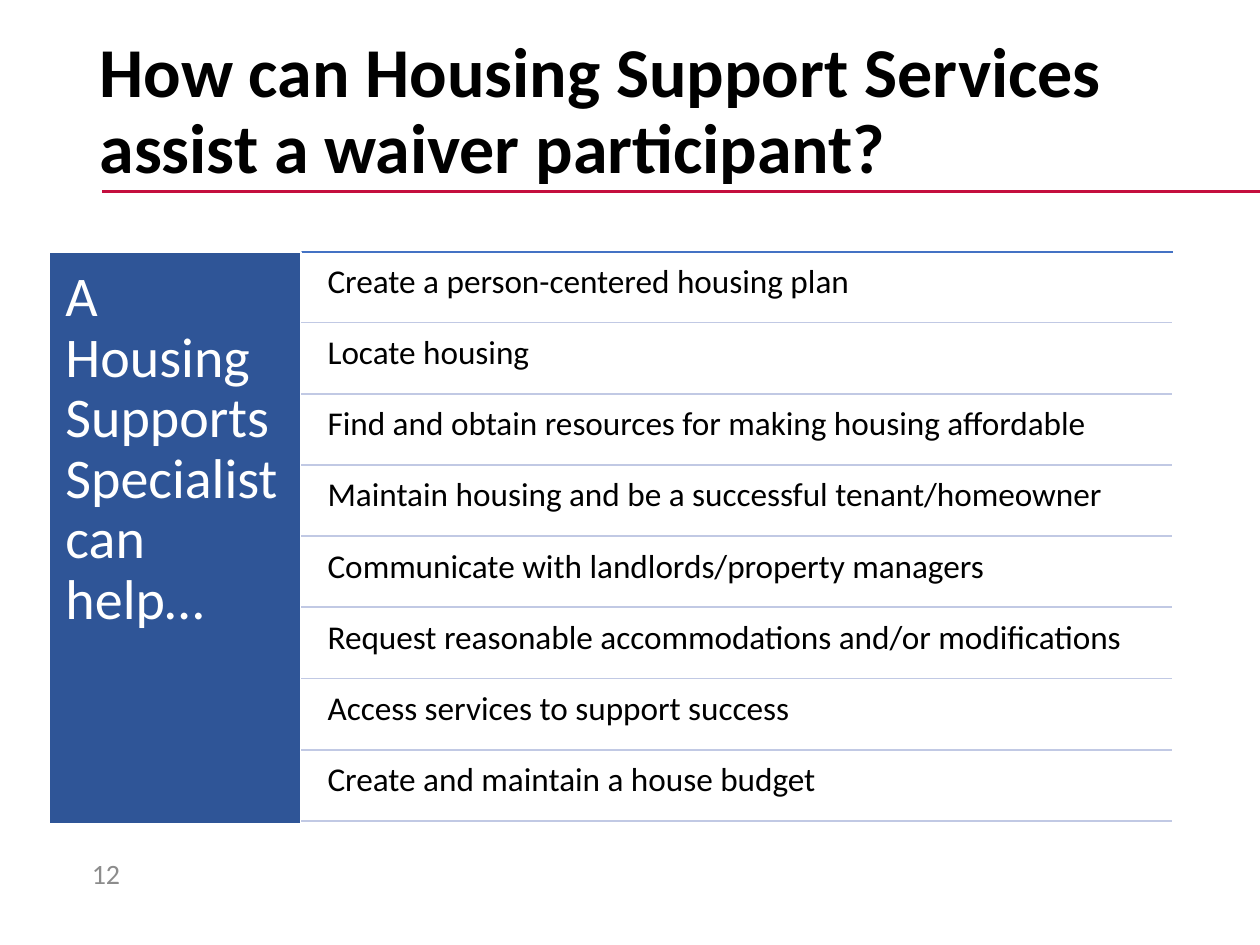
from dataclasses import dataclass

from lxml import etree
from pptx import Presentation
from pptx.dml.color import RGBColor
from pptx.enum.shapes import MSO_CONNECTOR, MSO_SHAPE
from pptx.enum.text import MSO_ANCHOR, MSO_AUTO_SIZE, PP_ALIGN
from pptx.oxml.ns import qn
from pptx.util import Inches, Pt

STRAIGHT = MSO_CONNECTOR.STRAIGHT
RECT = MSO_SHAPE.RECTANGLE
TOP, MIDDLE = MSO_ANCHOR.TOP, MSO_ANCHOR.MIDDLE
LEFT = PP_ALIGN.LEFT
FIXED = MSO_AUTO_SIZE.NONE

WIDE, HIGH = 10, 7.5
FONT = "Calibri"
COLORS = {
    "black": "000000",
    "white": "FFFFFF",
    "red": "C40E3E",
    "blue": "4472C4",
    "navy": "2F5597",
    "pale": "C1C9E4",
    "gray": "8C8C8C",
}
TITLE = "How can Housing Support Services assist a waiver participant?"
LEAD = "A Housing Supports Specialist can help…"
ITEMS = [
    "Create a person-centered housing plan",
    "Locate housing",
    "Find and obtain resources for making housing affordable",
    "Maintain housing and be a successful tenant/homeowner",
    "Communicate with landlords/property managers",
    "Request reasonable accommodations and/or modifications",
    "Access services to support success",
    "Create and maintain a house budget",
]


@dataclass
class Box:
    left: float
    top: float
    width: float
    height: float

    def place(self) -> list:
        return [Inches(n) for n in (self.left, self.top, self.width, self.height)]


@dataclass
class Style:
    size: float
    color: str
    inset: float = 0.1
    space: float = 0.9
    anchor: MSO_ANCHOR = TOP
    bold: bool = False


LIST = Box(0.39, 2, 8.92, 4.54)
SIDE = 2
EDGE = LIST.left + SIDE
END = LIST.left + LIST.width
GAP = 0.02
TEXT = 0.54
PITCH = (LIST.height - GAP) / len(ITEMS)


def color(name: str) -> RGBColor:
    return RGBColor.from_string(COLORS[name])


def write(shape, text: str, style: Style) -> None:
    frame = shape.text_frame
    frame.text = text
    frame.word_wrap = True
    frame.auto_size = FIXED
    frame.vertical_anchor = style.anchor
    if style.inset != 0.1:
        frame.margin_top = frame.margin_bottom = Inches(style.inset)
        frame.margin_left = frame.margin_right = Inches(style.inset)
    para = frame.paragraphs[0]
    para.alignment = LEFT
    para.line_spacing = style.space
    para.space_before = Pt(0)
    font = para.runs[0].font
    font.name = FONT
    font.size = Pt(style.size)
    font.bold = style.bold
    font.color.rgb = color(style.color)


def rule(slide, start: float, stop: float, top: float, name: str, width: float) -> None:
    line = slide.shapes.add_connector(
        STRAIGHT, Inches(start), Inches(top), Inches(stop), Inches(top)
    )
    line.line.color.rgb = color(name)
    line.line.width = Pt(width)
    etree.SubElement(line._element.spPr, qn("a:effectLst"))


def label(slide, box: Box, text: str, style: Style) -> None:
    write(slide.shapes.add_textbox(*box.place()), text, style)


def panel(slide, box: Box, text: str, style: Style) -> None:
    shape = slide.shapes.add_shape(RECT, *box.place())
    shape.shadow.inherit = False
    shape.fill.solid()
    shape.fill.fore_color.rgb = color("navy")
    shape.line.color.rgb = color("white")
    shape.line.width = Pt(0.75)
    write(shape, text, style)


def main() -> None:
    deck = Presentation()
    deck.slide_width, deck.slide_height = Inches(WIDE), Inches(HIGH)
    slide = deck.slides.add_slide(deck.slide_layouts[5])

    rule(slide, 0.81, WIDE, 1.52, "red", 2.25)
    title = slide.shapes.title
    title.left, title.top, title.width, title.height = Box(0.69, 0.17, 8.62, 1.45).place()
    write(title, TITLE, Style(40, "black", anchor=MIDDLE, bold=True))

    rule(slide, LIST.left, END, LIST.top, "blue", 1)
    side = Box(LIST.left, LIST.top, SIDE, LIST.height)
    panel(slide, side, LEAD, Style(32, "white", inset=0.13))

    body = Style(19, "black", inset=0.08)
    indent = EDGE + 0.13
    for row, item in enumerate(ITEMS):
        top = LIST.top + GAP + row * PITCH
        label(slide, Box(indent, top, END - indent, TEXT), item, body)
        rule(slide, EDGE, END - 0.01, top + TEXT, "pale", 1)

    number = Style(16, "gray", space=1.0, anchor=MIDDLE)
    label(slide, Box(0.63, 6.73, 0.55, 0.4), "12", number)
    deck.save("out.pptx")


if __name__ == "__main__":
    main()
